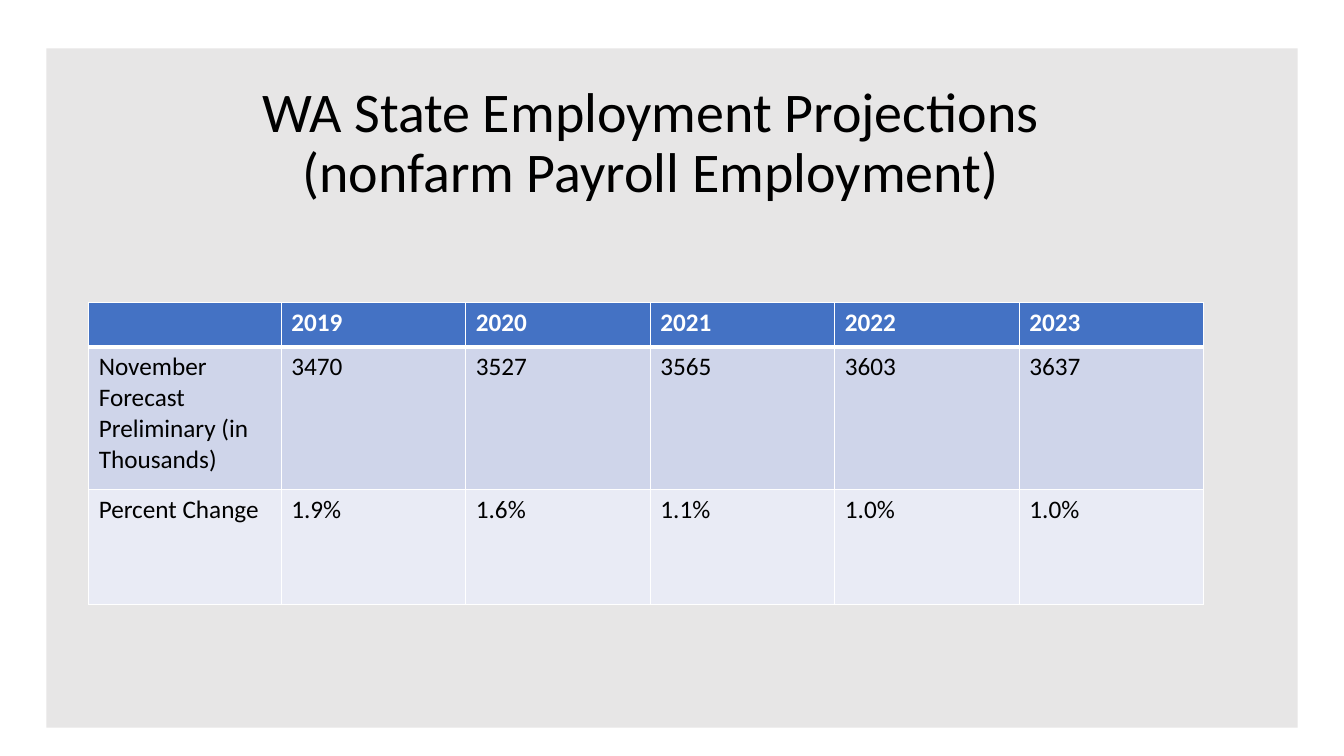
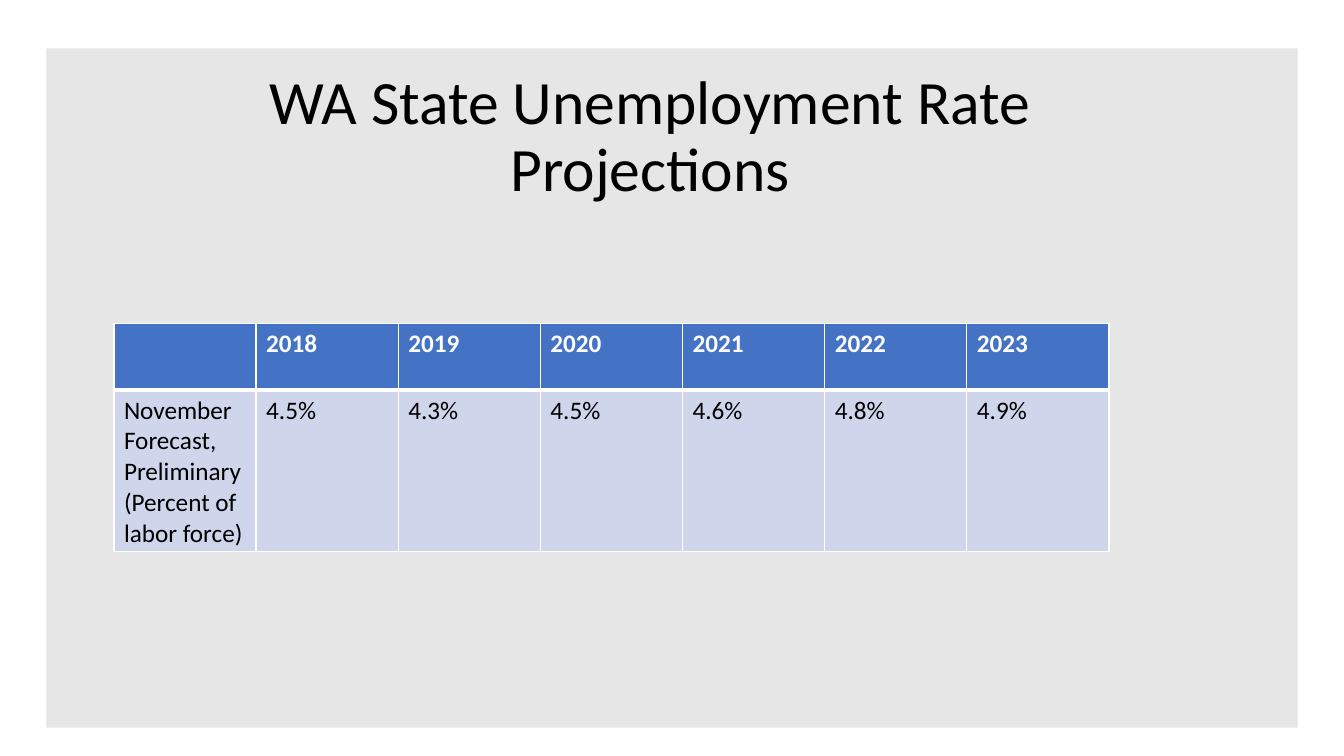
from lxml import etree
from pptx import Presentation
from pptx import util as u
from pptx.dml.color import RGBColor
from pptx.enum import shapes, text
from pptx.oxml.ns import qn


def rgb(value):
    return RGBColor.from_string(value)


class Deck:
    FONT = "Calibri"
    WHITE, BLACK, PANEL = "FFFFFF", "000000", "E7E6E6"
    HEADER, BANDS = "4472C4", ("CFD5EA", "E9EBF5")
    THIN, THICK = 1, 3

    def __init__(self):
        self.prs = Presentation()
        self.prs.slide_width = u.Inches(13.33)
        self.prs.slide_height = u.Inches(7.5)
        self.s = None

    def slide(self, title, size):
        self.s = self.prs.slides.add_slide(self.prs.slide_layouts[6])
        self.panel(0.46, 0.48, 12.41, 6.74)
        self.title(title, size)

    def panel(self, x, y, w, h):
        sp = self.s.shapes.add_shape(
            shapes.MSO_SHAPE.RECTANGLE, *map(u.Inches, (x, y, w, h)))
        sp.shadow.inherit = False
        sp.fill.solid()
        sp.fill.fore_color.rgb = rgb(self.PANEL)
        sp.line.fill.background()

    def run(self, p, words, size, color, bold=False):
        r = p.add_run()
        r.text = words
        r.font.name = self.FONT
        r.font.size = u.Pt(size)
        r.font.bold = bold
        r.font.color.rgb = rgb(color)

    def title(self, words, size):
        sp = self.s.shapes.add_textbox(*map(u.Inches, (1.45, 1.11, 10, 0.97)))
        tf = sp.text_frame
        tf.word_wrap = True
        tf.vertical_anchor = text.MSO_ANCHOR.BOTTOM
        p = tf.paragraphs[0]
        p.alignment = text.PP_ALIGN.CENTER
        p.line_spacing = 0.9
        self.run(p, words, size, self.BLACK)

    def borders(self, cell, top, bottom):
        tc_pr = cell._tc.get_or_add_tcPr()
        widths = {"L": self.THIN, "R": self.THIN, "T": top, "B": bottom}
        for side, width in widths.items():
            ln = etree.SubElement(tc_pr, qn(f"a:ln{side}"), w=str(u.Pt(width)))
            fill = etree.SubElement(ln, qn("a:solidFill"))
            etree.SubElement(fill, qn("a:srgbClr"), val=self.WHITE)

    def cell(self, cell, words, row):
        header = row == 0
        self.borders(cell, self.THICK if row == 1 else self.THIN,
                     self.THICK if header else self.THIN)
        cell.fill.solid()
        cell.fill.fore_color.rgb = rgb(
            self.HEADER if header else self.BANDS[(row - 1) % 2])
        if words:
            self.run(cell.text_frame.paragraphs[0], words, 18,
                     self.WHITE if header else self.BLACK, header)

    def table(self, x, y, widths, heights, rows):
        tbl = self.s.shapes.add_table(
            len(heights), len(widths),
            *map(u.Inches, (x, y, sum(widths), sum(heights)))).table
        for col, width in zip(tbl.columns, widths):
            col.width = u.Inches(width)
        for row, height in zip(tbl.rows, heights):
            row.height = u.Inches(height)
        for i, values in enumerate(rows):
            for j, words in enumerate(values):
                self.cell(tbl.cell(i, j), words, i)


def main():
    deck = Deck()

    deck.slide("WA State Employment Projections (nonfarm Payroll Employment)", 40)
    deck.table(0.88, 3, [1.91] + [1.83] * 5, [0.44, 1.42, 1.14], [
        ["", "2019", "2020", "2021", "2022", "2023"],
        ["November Forecast Preliminary (in Thousands)",
         "3470", "3527", "3565", "3603", "3637"],
        ["Percent Change", "1.9%", "1.6%", "1.1%", "1.0%", "1.0%"],
    ])

    deck.slide("WA State Unemployment Rate Projections", 44)
    deck.table(1.13, 3.21, [1.41] * 7, [0.66, 1.6], [
        ["", "2018", "2019", "2020", "2021", "2022", "2023"],
        ["November Forecast, Preliminary (Percent of labor force)",
         "4.5%", "4.3%", "4.5%", "4.6%", "4.8%", "4.9%"],
    ])

    deck.prs.save("out.pptx")


if __name__ == "__main__":
    main()
